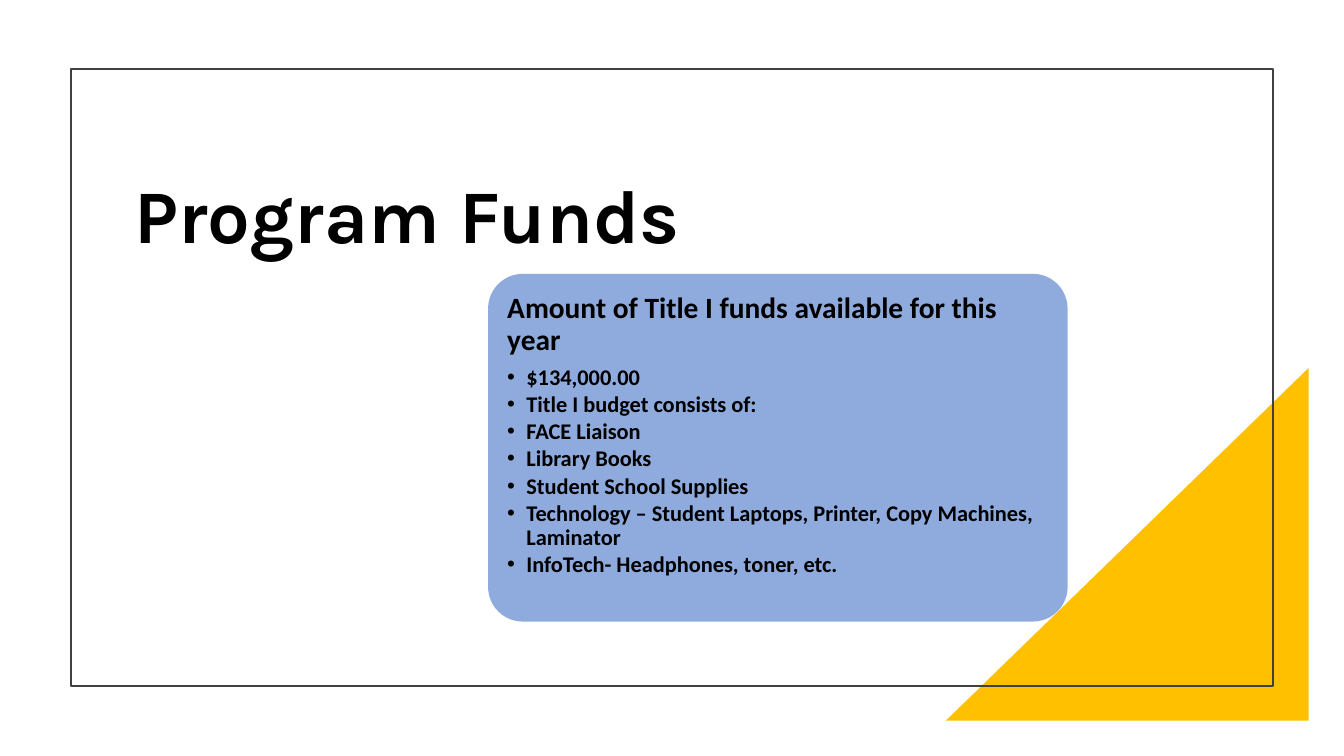
from dataclasses import dataclass

from pptx import Presentation
from pptx import util as u
from pptx.dml.color import RGBColor
from pptx.enum import shapes, text
from pptx.oxml import ns, xmlchemy

COLS, ROWS = 160, 90
WIDE, HIGH = u.Inches(13.33), u.Inches(7.5)


@dataclass(frozen=True)
class Theme:
    """Colours, fonts and type sizes of the slide."""

    ink: str = "000000"
    edge: str = "404040"
    gold: str = "FFC000"
    card: str = "8FAADC"
    display: str = "Karla"
    body: str = "Calibri"
    title: int = 54
    head: int = 21
    item: int = 16


THEME = Theme()
HEAD = "Amount of Title I funds available for this year"
ITEMS = (
    "$134,000.00",
    "Title I budget consists of:",
    "FACE Liaison",
    "Library Books",
    "Student School Supplies",
    "Technology – Student Laptops, Printer, Copy Machines, Laminator",
    "InfoTech- Headphones, toner, etc.",
)


def grid(col, row, cols, rows):
    """Turn grid cells into left, top, width and height."""
    x, y = WIDE / COLS, HIGH / ROWS
    return [u.Emu(round(n)) for n in (col * x, row * y, cols * x, rows * y)]


def draw(slide, kind, area, fill=None, line=None, flip=False):
    """Add a flat preset shape."""
    shape = slide.shapes.add_shape(kind, *grid(*area))
    shape.shadow.inherit = False
    if fill:
        shape.fill.solid()
        shape.fill.fore_color.rgb = RGBColor.from_string(fill)
    else:
        shape.fill.background()
    if line:
        shape.line.color.rgb = RGBColor.from_string(line)
        shape.line.width = u.Pt(1.5)
    else:
        shape.line.fill.background()
    if flip:
        shape._element.spPr.find(ns.qn("a:xfrm")).set("flipH", "1")
    return shape


def place(slide, holder, area, anchor, inset=0.1):
    """Move a placeholder to an area, in front of all else."""
    holder.left, holder.top, holder.width, holder.height = grid(*area)
    slide.shapes._spTree.append(holder._element)
    frame = holder.text_frame
    frame.word_wrap = True
    frame.auto_size = text.MSO_AUTO_SIZE.NONE
    frame.vertical_anchor = anchor
    frame.margin_left = frame.margin_right = u.Inches(inset)
    frame.margin_top = frame.margin_bottom = u.Inches(inset)
    return frame


def write(para, words, size, font=THEME.body, after=0, bullet=False):
    """Write one bold left paragraph, with or without a bullet."""
    para.alignment = text.PP_ALIGN.LEFT
    para.line_spacing = 0.9
    para.space_before, para.space_after = u.Pt(0), u.Pt(after)
    para.level = int(bullet)
    props = para._p.get_or_add_pPr()
    dent = u.Inches(0.19) if bullet else 0
    props.set("marL", str(dent))
    props.set("indent", str(-dent))
    mark = xmlchemy.OxmlElement("a:buChar" if bullet else "a:buNone")
    if bullet:
        mark.set("char", "•")
    props.append(mark)
    run = para.add_run()
    run.text = words
    run.font.name, run.font.size, run.font.bold = font, u.Pt(size), True
    run.font.color.rgb = RGBColor.from_string(THEME.ink)


def main():
    """Build and save the slide."""
    deck = Presentation()
    deck.slide_width, deck.slide_height = WIDE, HIGH
    slide = deck.slides.add_slide(deck.slide_layouts[1])
    title, body = slide.placeholders
    kind = shapes.MSO_SHAPE

    draw(slide, kind.RIGHT_TRIANGLE, (112.6, 43.8, 43.2, 42), THEME.gold, flip=True)
    draw(slide, kind.RECTANGLE, (8.4, 8.2, 143.2, 73.5), line=THEME.edge)

    frame = place(slide, title, (14.8, 15.6, 131, 21), text.MSO_ANCHOR.MIDDLE)
    write(frame.paragraphs[0], "Program Funds", THEME.title, THEME.display)

    col, row, cols, rows = 58.1, 32.6, 69, 41.4
    card = draw(slide, kind.ROUNDED_RECTANGLE, (col, row, cols, rows), THEME.card)
    card.adjustments[0] = 0.1
    pad = 1.2
    inner = (col + pad, row + pad, cols - 2 * pad, rows - 2 * pad)
    frame = place(slide, body, inner, text.MSO_ANCHOR.TOP, 0.09)
    write(frame.paragraphs[0], HEAD, THEME.head, after=7)
    for item in ITEMS:
        write(frame.add_paragraph(), item, THEME.item, after=2.1, bullet=True)

    deck.save("out.pptx")


if __name__ == "__main__":
    main()
